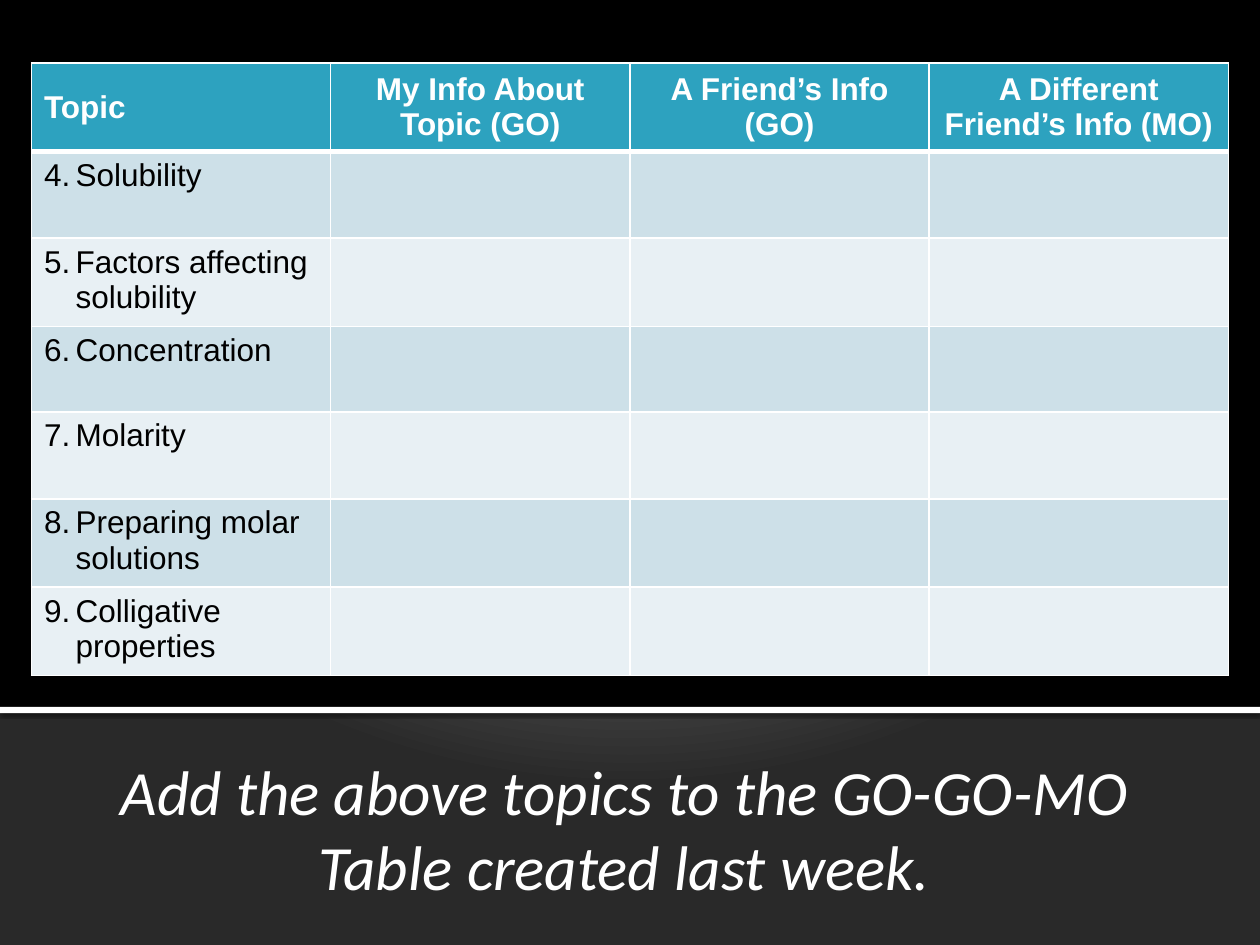
from dataclasses import dataclass

from pptx import Presentation
from pptx import oxml
from pptx.dml import color
from pptx.enum import shapes, text
from pptx.oxml import ns
from pptx import util as u


@dataclass(frozen=True)
class Theme:
    black: str = "000000"
    white: str = "FFFFFF"
    header: str = "2DA2BF"
    bands: tuple = ("CDE0E8", "E8F0F4")
    glow: tuple = ((0, "C4C4C4"), (12, "C4C4C4"), (20, "C2C2C2"), (100, "292929"))
    caption_size: int = 36
    table_size: int = 18
    caption_font: str = "Calibri"
    table_font: str = "Arial"


theme = Theme()


def write_text(frame, words, *, size, font, fill, bold=False, italic=False, align=None):
    frame.word_wrap = True
    paragraph = frame.paragraphs[0]
    paragraph.alignment = align
    run = paragraph.add_run()
    run.text = words
    run.font.size = u.Pt(size)
    run.font.name = font
    run.font.bold = bold
    run.font.italic = italic
    run.font.color.rgb = color.RGBColor.from_string(fill)
    return paragraph


def add_xml(parent, tag, content="", attributes=""):
    parent.append(oxml.parse_xml(
        f'<a:{tag} {ns.nsdecls("a")} {attributes}>{content}</a:{tag}>'))


presentation = Presentation()
presentation.slide_width = u.Inches(10)
presentation.slide_height = u.Inches(7.5)
slide = presentation.slides.add_slide(presentation.slide_layouts[6])

slide.background.fill.gradient()
gradient = slide.element.find(".//" + ns.qn("a:gradFill"))
for child in list(gradient):
    gradient.remove(child)
add_xml(gradient, "gsLst", "".join(
    f'<a:gs pos="{place * 1000}"><a:srgbClr val="{shade}"/></a:gs>'
    for place, shade in theme.glow))
add_xml(gradient, "path", '<a:fillToRect l="10000" t="-25000" r="10000" b="125000"/>',
        'path="circle"')

for top, height, fill in ((0, 5.62, theme.black), (5.61, 0.05, theme.white)):
    bar = slide.shapes.add_shape(shapes.MSO_SHAPE.RECTANGLE, 0, u.Inches(top),
                                 u.Inches(10), u.Inches(height))
    bar.shadow.inherit = False
    bar.fill.solid()
    bar.fill.fore_color.rgb = color.RGBColor.from_string(fill)
    bar.line.fill.background()

add_xml(bar.element.spPr.find(ns.qn("a:effectLst")), "outerShdw",
        f'<a:srgbClr val="{theme.black}"><a:alpha val="60000"/></a:srgbClr>',
        f'blurRad="{u.Pt(2.5)}" dist="{u.Pt(0.8)}" dir="5400000" rotWithShape="0"')

caption = slide.shapes.add_textbox(u.Inches(0.83), u.Inches(5.92),
                                   u.Inches(8.25), u.Inches(0.67))
write_text(caption.text_frame, "Add the above topics to the GO-GO-MO Table created last week.",
           size=theme.caption_size, font=theme.caption_font, fill=theme.white,
           italic=True, align=text.PP_ALIGN.CENTER)

headings = ["Topic", "My Info About Topic (GO)", "A Friend’s Info (GO)",
            "A Different Friend’s Info (MO)"]
topics = ["Solubility", "Factors affecting solubility", "Concentration", "Molarity",
          "Preparing molar solutions", "Colligative properties"]
first_number = 4
row_heights = [0.68, 0.69, 0.66, 0.68, 0.69, 0.66, 0.66]

table = slide.shapes.add_table(len(row_heights), len(headings), u.Inches(0.25), u.Inches(0.5),
                               u.Inches(9.5), u.Inches(sum(row_heights))).table
table.first_row = False
table.horz_banding = False

for row_index, height in enumerate(row_heights):
    table.rows[row_index].height = u.Inches(height)
    is_header = row_index == 0
    fill = theme.header if is_header else theme.bands[(row_index - 1) % 2]
    widths = {"lnL": 1, "lnR": 1, "lnT": 3 if row_index == 1 else 1,
              "lnB": 3 if is_header else 1}
    for column_index, heading in enumerate(headings):
        cell = table.cell(row_index, column_index)
        properties = cell._tc.get_or_add_tcPr()
        for side, width in widths.items():
            add_xml(properties, side,
                    f'<a:solidFill><a:srgbClr val="{theme.white}"/></a:solidFill>',
                    f'w="{u.Pt(width)}"')
        cell.fill.solid()
        cell.fill.fore_color.rgb = color.RGBColor.from_string(fill)
        if is_header:
            cell.vertical_anchor = text.MSO_ANCHOR.MIDDLE
            write_text(cell.text_frame, heading, size=theme.table_size,
                       font=theme.table_font, fill=theme.white, bold=True,
                       align=text.PP_ALIGN.CENTER if column_index else None)
        elif column_index == 0:
            paragraph = write_text(cell.text_frame, topics[row_index - 1],
                                   size=theme.table_size, font=theme.table_font,
                                   fill=theme.black)
            numbering = paragraph._p.get_or_add_pPr()
            numbering.set("marL", str(u.Inches(0.25)))
            numbering.set("indent", str(-u.Inches(0.25)))
            add_xml(numbering, "buFont", attributes=f'typeface="{theme.table_font}"')
            add_xml(numbering, "buAutoNum", attributes=(
                f'type="arabicPeriod" startAt="{first_number + row_index - 1}"'))

presentation.save("out.pptx")
